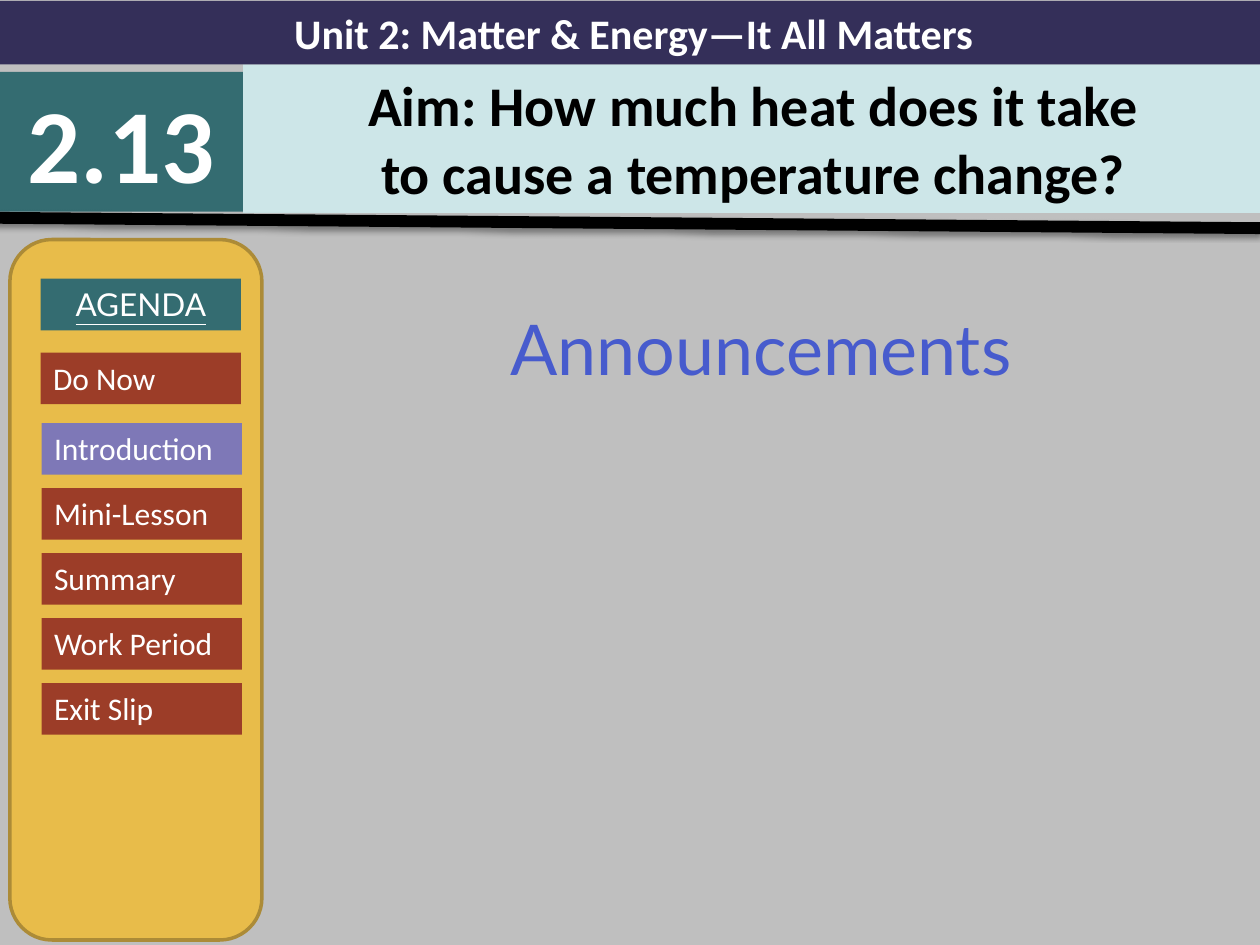
from dataclasses import dataclass

from lxml.etree import SubElement
from pptx import Presentation
from pptx.dml.color import RGBColor
from pptx.enum.shapes import MSO_CONNECTOR, MSO_SHAPE
from pptx.enum.text import MSO_ANCHOR, MSO_AUTO_SIZE, PP_ALIGN
from pptx.oxml.ns import qn
from pptx.util import Cm, Pt


@dataclass(frozen=True)
class Theme:
    background: str = "BFBFBF"
    navy: str = "342F59"
    teal: str = "346C71"
    pale_teal: str = "CDE6E8"
    gold: str = "E8BC4A"
    gold_edge: str = "AC8B37"
    rust: str = "9C3D28"
    violet: str = "7E78B7"
    blue: str = "475BCD"
    white: str = "FFFFFF"
    black: str = "000000"
    text_font: str = "Calibri"
    accent_font: str = "Lato"
    number_size: int = 60
    heading_size: int = 40
    aim_size: int = 32
    unit_size: int = 24
    agenda_size: int = 18


THEME = Theme()
CURRENT_ITEM = "Introduction"
LATER_ITEMS = (CURRENT_ITEM, "Mini-Lesson", "Summary", "Work Period", "Exit Slip")
BUTTON_WIDTH, BUTTON_HEIGHT = 4.04, 1.04
FIRST_LATER_TOP, BUTTON_STEP = 8.53, 1.31


def color(value):
    return RGBColor.from_string(value)


def paint(shape, value):
    shape.fill.solid()
    shape.fill.fore_color.rgb = color(value)


def place(shape, left, top, width, height):
    shape.left, shape.top = Cm(left), Cm(top)
    shape.width, shape.height = Cm(width), Cm(height)


def write(shape, text, *, size, font=THEME.text_font, fill=THEME.white, bold=False,
          underline=False, align=PP_ALIGN.CENTER, line_spacing=None):
    """Fill the shape with text, one paragraph for each line."""
    frame = shape.text_frame
    frame.word_wrap = True
    frame.auto_size = MSO_AUTO_SIZE.NONE
    frame.vertical_anchor = MSO_ANCHOR.TOP
    frame.text = text
    for paragraph in frame.paragraphs:
        paragraph.alignment = align
        paragraph.line_spacing = line_spacing
        for run in paragraph.runs:
            run.font.name = font
            run.font.size = Pt(size)
            run.font.bold = bold
            run.font.underline = underline
            run.font.color.rgb = color(fill)


def add_box(shapes, left, top, width, height, fill, kind=MSO_SHAPE.RECTANGLE):
    shape = shapes.add_shape(kind, Cm(left), Cm(top), Cm(width), Cm(height))
    shape.shadow.inherit = False
    paint(shape, fill)
    shape.line.fill.background()
    return shape


def add_agenda_item(shapes, text, left, top):
    fill = THEME.violet if text == CURRENT_ITEM else THEME.rust
    button = add_box(shapes, left, top, BUTTON_WIDTH, BUTTON_HEIGHT, fill)
    write(button, text, size=THEME.agenda_size, align=PP_ALIGN.LEFT)


def add_agenda(slide):
    group = slide.shapes.add_group_shape()
    panel = add_box(group.shapes, 0.2, 4.83, 5.08, 14.12, THEME.gold,
                    MSO_SHAPE.ROUNDED_RECTANGLE)
    panel.line.color.rgb = color(THEME.gold_edge)
    panel.line.width = Pt(2)
    heading = add_box(group.shapes, 0.82, 5.62, BUTTON_WIDTH, BUTTON_HEIGHT, THEME.teal)
    write(heading, "AGENDA", size=THEME.agenda_size, font=THEME.accent_font, underline=True)
    for index, text in enumerate(LATER_ITEMS):
        add_agenda_item(group.shapes, text, 0.84, FIRST_LATER_TOP + index * BUTTON_STEP)
    add_agenda_item(slide.shapes, "Do Now", 0.82, 7.11)


def add_shadow(connector):
    effects = SubElement(connector._element.spPr, qn("a:effectLst"))
    shadow = SubElement(effects, qn("a:outerShdw"), blurRad="40000", dist="20000",
                        dir="5400000", rotWithShape="0")
    shade = SubElement(shadow, qn("a:srgbClr"), val=THEME.black)
    SubElement(shade, qn("a:alpha"), val="38000")


def add_divider(slide):
    divider = slide.shapes.add_connector(
        MSO_CONNECTOR.STRAIGHT, Cm(-0.13), Cm(4.39), Cm(25.4), Cm(4.6))
    divider.line.color.rgb = color(THEME.black)
    divider.line.width = Pt(6.75)
    add_shadow(divider)


def add_header(slide):
    unit = add_box(slide.shapes, 0, 0.02, 25.55, 1.28, THEME.navy)
    write(unit, "Unit 2: Matter & Energy—It All Matters", size=THEME.unit_size, bold=True)
    number = add_box(slide.shapes, 0, 1.45, 4.9, 2.82, THEME.teal)
    write(number, "2.13", size=THEME.number_size, bold=True)
    aim = slide.shapes.title
    place(aim, 4.9, 1.3, 20.57, 2.99)
    paint(aim, THEME.pale_teal)
    write(aim, "Aim: How much heat does it take\nto cause a temperature change?",
          size=THEME.aim_size, fill=THEME.black, bold=True)


def add_announcements(slide):
    body = slide.placeholders[1]
    place(body, 5.28, 5.18, 20.12, 13.87)
    write(body, "Announcements", size=THEME.heading_size, font=THEME.accent_font,
          fill=THEME.blue, line_spacing=1.5)


def main():
    presentation = Presentation()
    presentation.slide_width, presentation.slide_height = Cm(25.4), Cm(19.05)
    slide = presentation.slides.add_slide(presentation.slide_layouts[0])
    paint(slide.background, THEME.background)
    add_announcements(slide)
    add_header(slide)
    add_divider(slide)
    add_agenda(slide)
    presentation.save("out.pptx")


if __name__ == "__main__":
    main()
